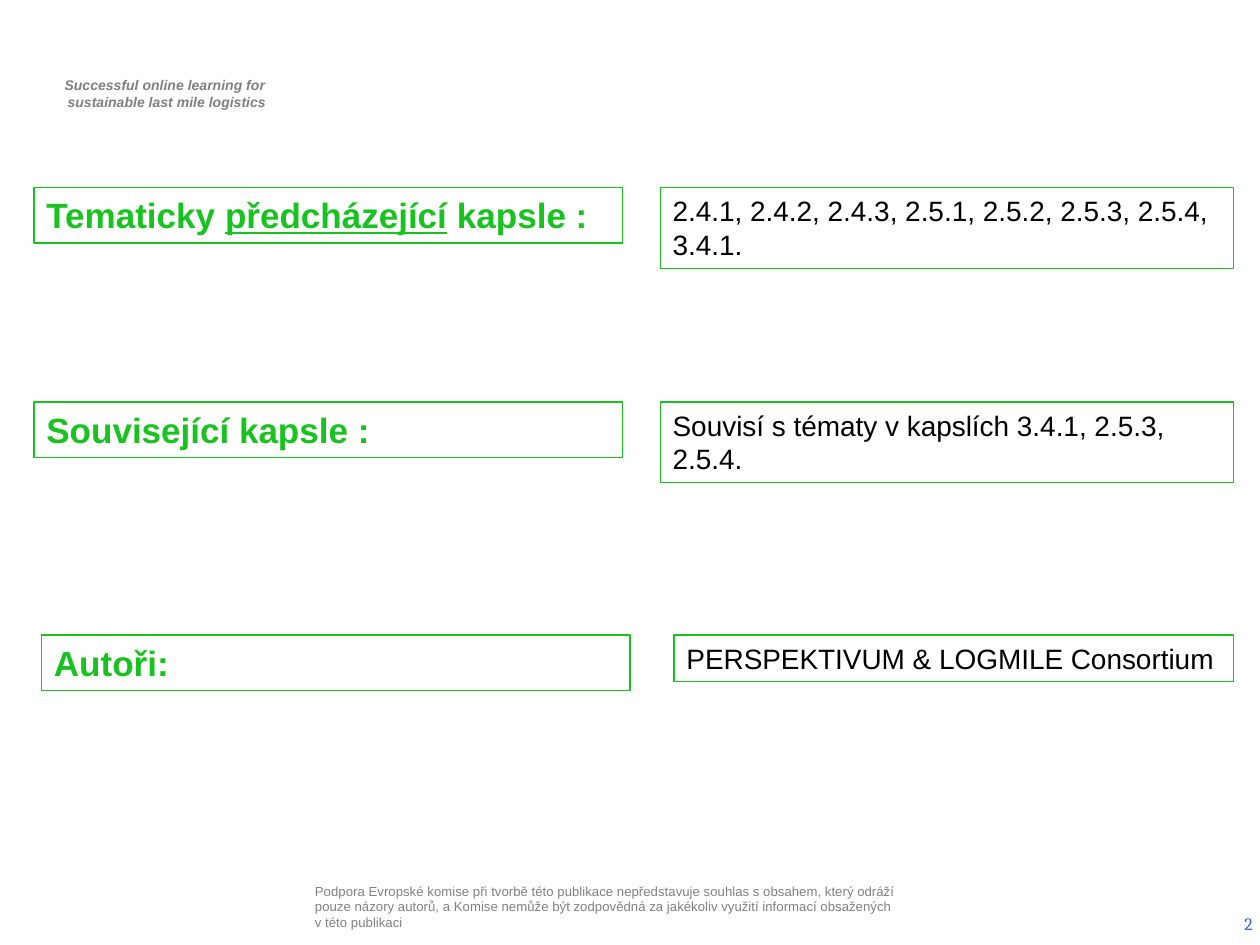
from dataclasses import dataclass, field

from pptx import Presentation
from pptx.dml.color import RGBColor
from pptx.enum.shapes import MSO_SHAPE
from pptx.enum.text import MSO_ANCHOR, MSO_AUTO_SIZE, PP_ALIGN
from pptx.slide import Slide
from pptx.text.text import TextFrame
from pptx.util import Inches, Pt

GREEN = RGBColor(0x18, 0xC3, 0x20)
BLACK = RGBColor(0, 0, 0)
WHITE = RGBColor(0xFF, 0xFF, 0xFF)
HEADER_GRAY = RGBColor(0x7F, 0x7F, 0x7F)
FOOTER_GRAY = RGBColor(0x80, 0x80, 0x80)
NUMBER_BLUE = RGBColor(0x33, 0x66, 0xCC)

LABEL_FORMAT = {"name": "Arial", "size": Pt(20), "bold": True, "color": GREEN}
VALUE_FORMAT = {"name": "Arial", "size": Pt(16), "color": BLACK}
HEADER_FORMAT = {"name": "Arial", "size": Pt(8), "bold": True, "italic": True,
                 "color": HEADER_GRAY}
FOOTER_FORMAT = {"name": "Arial", "size": Pt(7.5), "color": FOOTER_GRAY}
NUMBER_FORMAT = {"name": "Cambria", "size": Pt(10), "color": NUMBER_BLUE}

LABEL_WIDTH, LABEL_HEIGHT = 4.67, 0.44
VALUE_RIGHT = 9.79


@dataclass(frozen=True)
class Caption:
    """Unframed text at the edge of the slide."""
    lines: list[str]
    left: float
    top: float
    width: float
    height: float
    text_format: dict
    align: PP_ALIGN = PP_ALIGN.LEFT
    anchor: MSO_ANCHOR = MSO_ANCHOR.MIDDLE
    inset_x: float = 0.1
    inset_y: float = 0.05
    indent: float = 0


@dataclass(frozen=True)
class CapsuleRow:
    """A label box and the value box beside it."""
    label: list[str]
    value: str
    top: float
    label_left: float = 0.27
    value_left: float = 5.24
    value_height: float = 0.64
    underlined: set[str] = field(default_factory=set)


CAPTIONS = [
    Caption(["Successful online learning for ", "sustainable last mile logistics"],
            0.29, 0.56, 2.03, 0.37, HEADER_FORMAT, PP_ALIGN.CENTER,
            MSO_ANCHOR.TOP, indent=0.04),
    Caption(["Podpora Evropské komise při tvorbě této publikace nepředstavuje "
             "souhlas s obsahem, který odráží pouze názory autorů, a Komise "
             "nemůže být zodpovědná za jakékoliv využití informací obsažených "
             "v této publikaci"],
            2.46, 6.95, 4.73, 0.49, FOOTER_FORMAT, inset_x=0.04, inset_y=0.04),
    Caption(["2"], 7.71, 7.13, 2.33, 0.4, NUMBER_FORMAT, PP_ALIGN.RIGHT),
]

ROWS = [
    CapsuleRow(["Tematicky ", "předcházející", " kapsle :"],
               "2.4.1, 2.4.2, 2.4.3, 2.5.1, 2.5.2, 2.5.3, 2.5.4, 3.4.1.",
               1.49, underlined={"předcházející"}),
    CapsuleRow(["Související kapsle :"],
               "Souvisí s tématy v kapslích 3.4.1, 2.5.3, 2.5.4.", 3.19),
    CapsuleRow(["Autoři:"], "PERSPEKTIVUM & LOGMILE Consortium", 5.04,
               label_left=0.33, value_left=5.35, value_height=0.37),
]


def apply_format(font, text_format: dict) -> None:
    for attribute, value in text_format.items():
        if attribute == "color":
            font.color.rgb = value
        else:
            setattr(font, attribute, value)


def set_frame(frame: TextFrame, anchor: MSO_ANCHOR, inset_x: float = 0.1,
              inset_y: float = 0.05) -> None:
    frame.word_wrap = True
    frame.vertical_anchor = anchor
    frame.margin_left = frame.margin_right = Inches(inset_x)
    frame.margin_top = frame.margin_bottom = Inches(inset_y)


def add_caption(slide: Slide, caption: Caption) -> None:
    box = slide.shapes.add_textbox(Inches(caption.left), Inches(caption.top),
                                   Inches(caption.width), Inches(caption.height))
    frame = box.text_frame
    set_frame(frame, caption.anchor, caption.inset_x, caption.inset_y)
    frame.text = "\n".join(caption.lines)
    for paragraph in frame.paragraphs:
        paragraph.alignment = caption.align
        if caption.indent:
            paragraph._p.get_or_add_pPr().set("marL", str(Inches(caption.indent)))
        apply_format(paragraph.runs[0].font, caption.text_format)


def add_framed_text(slide: Slide, left: float, top: float, width: float,
                    height: float, parts: list[str], text_format: dict,
                    underlined: set[str]) -> None:
    box = slide.shapes.add_shape(MSO_SHAPE.RECTANGLE, Inches(left), Inches(top),
                                 Inches(width), Inches(height))
    box.shadow.inherit = False
    box.fill.solid()
    box.fill.fore_color.rgb = WHITE
    box.line.color.rgb = GREEN
    box.line.width = Pt(0.75)
    set_frame(box.text_frame, MSO_ANCHOR.TOP)
    box.text_frame.auto_size = MSO_AUTO_SIZE.SHAPE_TO_FIT_TEXT
    paragraph = box.text_frame.paragraphs[0]
    paragraph.alignment = PP_ALIGN.LEFT
    for part in parts:
        run = paragraph.add_run()
        run.text = part
        apply_format(run.font, text_format)
        if part in underlined:
            run.font.underline = True


def add_row(slide: Slide, row: CapsuleRow) -> None:
    add_framed_text(slide, row.label_left, row.top, LABEL_WIDTH, LABEL_HEIGHT,
                    row.label, LABEL_FORMAT, row.underlined)
    add_framed_text(slide, row.value_left, row.top, VALUE_RIGHT - row.value_left,
                    row.value_height, [row.value], VALUE_FORMAT, set())


def main() -> None:
    presentation = Presentation()
    presentation.slide_width = Inches(10)
    presentation.slide_height = Inches(7.5)
    slide = presentation.slides.add_slide(presentation.slide_layouts[6])
    for caption in CAPTIONS:
        add_caption(slide, caption)
    for row in ROWS:
        add_row(slide, row)
    presentation.save("out.pptx")


if __name__ == "__main__":
    main()
